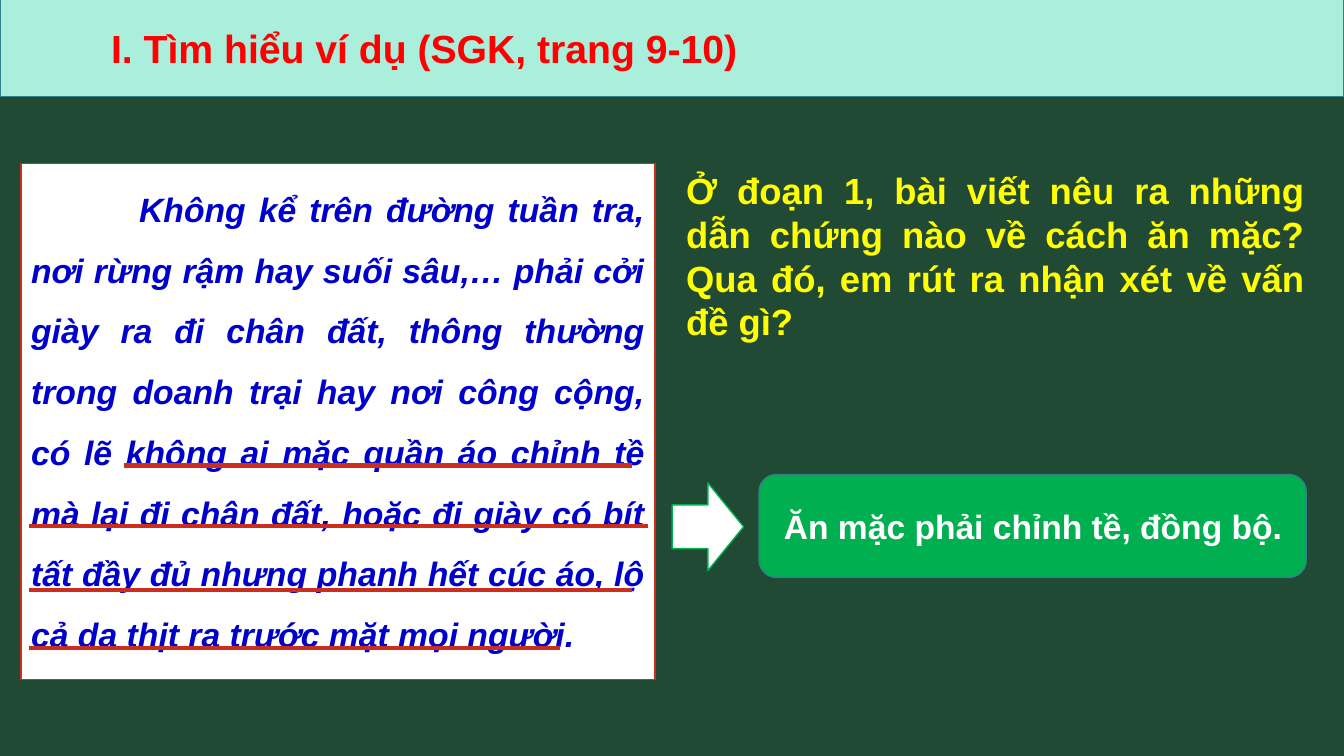
from pptx import Presentation
from pptx.dml.color import RGBColor
from pptx.enum.shapes import MSO_CONNECTOR, MSO_SHAPE as Preset
from pptx.enum.text import MSO_ANCHOR as Anchor, MSO_AUTO_SIZE as AutoSize, PP_ALIGN as Align
from pptx.oxml.ns import qn
from pptx.util import Cm, Pt
from lxml.etree import SubElement


def paint(shape, fill, line):
    shape.fill.solid()
    shape.fill.fore_color.rgb = RGBColor.from_string(fill)
    shape.line.color.rgb = RGBColor.from_string(line)
    shape.line.width = Pt(1)
    shape.shadow.inherit = False


def write(shape, text, size, color, align, anchor, italic=False):
    frame = shape.text_frame
    frame.word_wrap = True
    frame.auto_size = AutoSize.NONE
    frame.vertical_anchor = anchor
    paragraph = frame.paragraphs[0]
    paragraph.alignment = align
    run = paragraph.add_run()
    run.text = text
    run.font.name = "Arial"
    run.font.size = Pt(size)
    run.font.bold = True
    run.font.italic = italic
    run.font.color.rgb = RGBColor.from_string(color)
    return paragraph


prs = Presentation()
prs.slide_width, prs.slide_height = Cm(33.87), Cm(19.05)
slide = prs.slides.add_slide(prs.slide_layouts[1])
slide.background.fill.solid()
slide.background.fill.fore_color.rgb = RGBColor.from_string("214A34")

# Heading band
heading = slide.shapes.title
heading.left, heading.top, heading.width, heading.height = Cm(0), Cm(-0.05), Cm(33.87), Cm(2.49)
paint(heading, "AAEEDC", "30818C")
heading.text_frame.margin_left = Cm(2.8)
write(heading, "I. Tìm hiểu ví dụ (SGK, trang 9-10)", 28, "FF0000", Align.LEFT, Anchor.MIDDLE)

# Quoted passage with a first-line indent and no bullet
passage = slide.placeholders[1]
passage.left, passage.top, passage.width, passage.height = Cm(0.53), Cm(4.12), Cm(15.98), Cm(13)
paint(passage, "FFFFFF", "CC2E1D")
passage_text = write(
    passage,
    "Không kể trên đường tuần tra, nơi rừng rậm hay suối sâu,… phải cởi giày ra đi chân đất, "
    "thông thường trong doanh trại hay nơi công cộng, có lẽ không ai mặc quần áo chỉnh tề "
    "mà lại đi chân đất, hoặc đi giày có bít tất đầy đủ nhưng phanh hết cúc áo, "
    "lộ cả da thịt ra trước mặt mọi người.",
    24.1, "0000CC", Align.JUSTIFY, Anchor.TOP, italic=True)
passage_text.line_spacing = 1.5
passage_text.space_before = Pt(10)
passage_format = passage_text._p.get_or_add_pPr()
passage_format.set("marL", "0")
passage_format.set("indent", str(Cm(2.72)))
SubElement(passage_format, qn("a:buNone"))

# Question
question = slide.shapes.add_textbox(Cm(17.04), Cm(4.12), Cm(16.1), Cm(4.7))
write(question,
      "Ở đoạn 1, bài viết nêu ra những dẫn chứng nào về cách ăn mặc? "
      "Qua đó, em rút ra nhận xét về vấn đề gì?",
      26, "FFFF00", Align.JUSTIFY, Anchor.TOP)

# Underlines of the evidence: start, end, height
for start, end, y in [(3.12, 15.93, 11.73), (0.74, 16.33, 13.26),
                      (0.74, 15.93, 14.86), (0.74, 14.12, 16.33)]:
    underline = slide.shapes.add_connector(
        MSO_CONNECTOR.STRAIGHT, Cm(start), Cm(y), Cm(end), Cm(y))
    underline.line.color.rgb = RGBColor.from_string("CC2E1D")
    underline.line.width = Pt(3)
    SubElement(underline._element.spPr, qn("a:effectLst"))

# Arrow to the conclusion
arrow = slide.shapes.add_shape(Preset.RIGHT_ARROW, Cm(16.94), Cm(12.17), Cm(1.8), Cm(2.21))
paint(arrow, "FFFFFF", "00B050")

conclusion = slide.shapes.add_shape(
    Preset.ROUNDED_RECTANGLE, Cm(19.13), Cm(11.96), Cm(13.79), Cm(2.59))
paint(conclusion, "00B050", "30818C")
conclusion.text_frame.margin_left = Cm(0.5)
write(conclusion, "Ăn mặc phải chỉnh tề, đồng bộ.", 24, "FFFFFF", Align.JUSTIFY, Anchor.MIDDLE)

prs.save("out.pptx")
